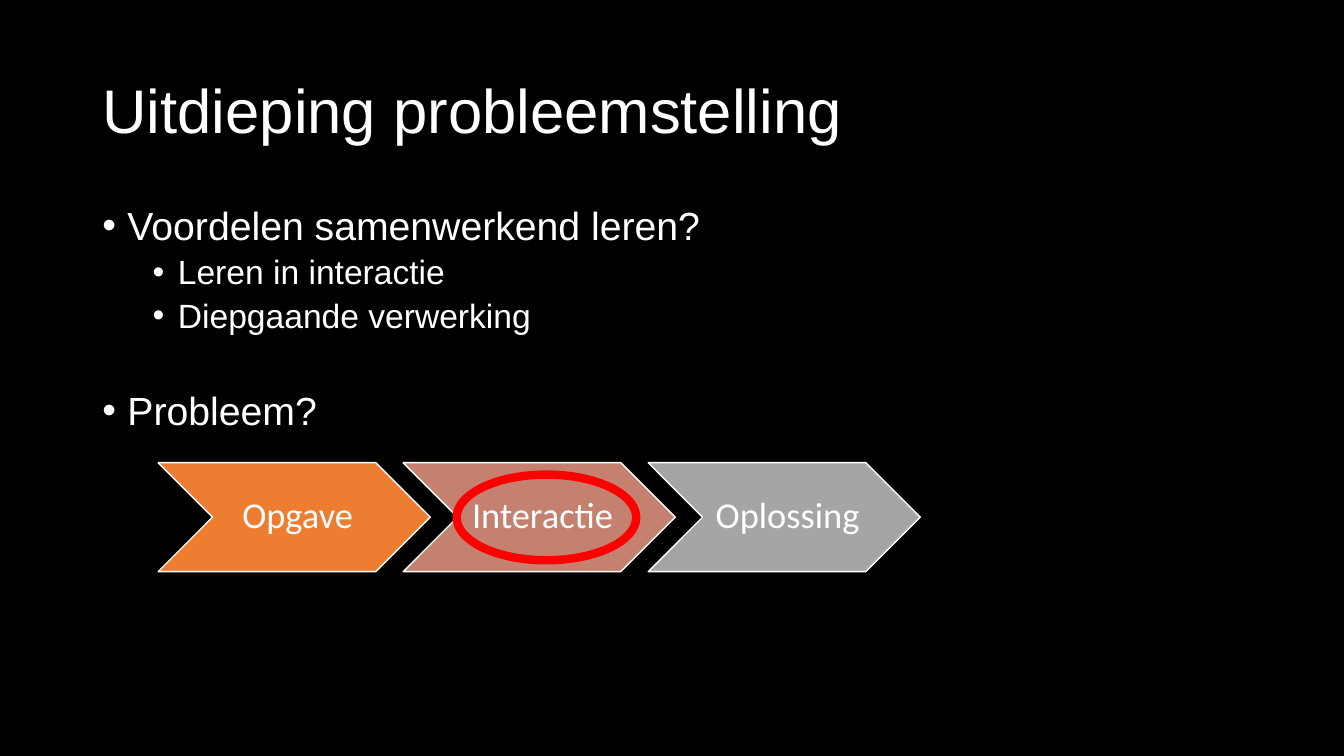
from lxml import etree
from pptx import Presentation
from pptx.dml.color import RGBColor
from pptx.enum import shapes, text
from pptx.oxml.ns import qn
from pptx.util import Pt

BLACK = RGBColor(0x00, 0x00, 0x00)
WHITE = RGBColor(0xFF, 0xFF, 0xFF)
ORANGE = RGBColor(0xED, 0x7D, 0x31)
ROSE = RGBColor(0xC4, 0x81, 0x70)
GREY = RGBColor(0xA5, 0xA5, 0xA5)
RED = RGBColor(0xFF, 0x00, 0x00)

BULLETS = [
    ("Voordelen samenwerkend leren?", 0, 10),
    ("Leren in interactie", 1, 5),
    ("Diepgaande verwerking", 1, 5),
    ("Probleem?", 0, 40),
]
STEPS = [("Opgave", ORANGE), ("Interactie", ROSE), ("Oplossing", GREY)]
STEP_LEFT, STEP_TOP, STEP_PITCH = 113, 330.5, 175


def apply(obj, **values):
    """Set each given attribute on an object."""
    for name, value in values.items():
        setattr(obj, name, value)


def write(p, wording, size, font, **values):
    """Fill a paragraph with one white run."""
    apply(p, line_spacing=0.9, **values)
    r = p.add_run()
    r.text = wording
    apply(r.font, size=Pt(size), name=font)
    r.font.color.rgb = WHITE


def add_title(s, wording):
    """Move and fill the title placeholder."""
    sp = s.shapes.title
    apply(sp, left=Pt(66), top=Pt(28.8), width=Pt(828), height=Pt(104.4))
    tf = sp.text_frame
    apply(tf, vertical_anchor=text.MSO_ANCHOR.MIDDLE, word_wrap=True,
          auto_size=text.MSO_AUTO_SIZE.NONE)
    write(tf.paragraphs[0], wording, 44, "Arial", alignment=text.PP_ALIGN.LEFT)


def add_bullets(s, items):
    """Add the two-level bulleted list."""
    tf = s.shapes.add_textbox(Pt(66), Pt(144), Pt(828), Pt(342.6)).text_frame
    tf.word_wrap = True
    for i, (wording, level, before) in enumerate(items):
        p = tf.add_paragraph() if i else tf.paragraphs[0]
        write(p, wording, 28 - 4 * level, "Arial", level=level, space_before=Pt(before))
        pPr = p._p.get_or_add_pPr()
        pPr.set("marL", str(Pt(18 + 36 * level)))
        pPr.set("indent", str(-Pt(18)))
        etree.SubElement(pPr, qn("a:buFont")).set("typeface", "Arial")
        etree.SubElement(pPr, qn("a:buChar")).set("char", "•")


def add_outlined(s, kind, box, line_color, line_width, fill=None):
    """Add a preset shape with an outline and an optional fill."""
    sp = s.shapes.add_shape(kind, *map(Pt, box))
    sp.shadow.inherit = False
    if fill is None:
        sp.fill.background()
    else:
        sp.fill.solid()
        sp.fill.fore_color.rgb = fill
    sp.line.color.rgb = line_color
    sp.line.width = Pt(line_width)
    return sp


def add_step(s, index, wording, color):
    """Add one labelled chevron of the process."""
    box = (STEP_LEFT + index * STEP_PITCH, STEP_TOP, 194.4, 77.8)
    sp = add_outlined(s, shapes.MSO_SHAPE.CHEVRON, box, WHITE, 1, color)
    tf = sp.text_frame
    apply(tf, margin_left=Pt(8), margin_top=Pt(3), margin_right=Pt(3),
          margin_bottom=Pt(3), word_wrap=True, vertical_anchor=text.MSO_ANCHOR.MIDDLE)
    write(tf.paragraphs[0], wording, 26, "Calibri", alignment=text.PP_ALIGN.CENTER)


def main():
    """Build and save the slide."""
    prs = Presentation()
    apply(prs, slide_width=Pt(960), slide_height=Pt(540))
    s = prs.slides.add_slide(prs.slide_layouts[5])
    s.background.fill.solid()
    s.background.fill.fore_color.rgb = BLACK
    add_title(s, "Uitdieping probleemstelling")
    add_bullets(s, BULLETS)
    for i, (wording, color) in enumerate(STEPS):
        add_step(s, i, wording, color)
    add_outlined(s, shapes.MSO_SHAPE.OVAL, (326.2, 339, 128.2, 61.2), RED, 6)
    prs.save("out.pptx")


if __name__ == "__main__":
    main()
